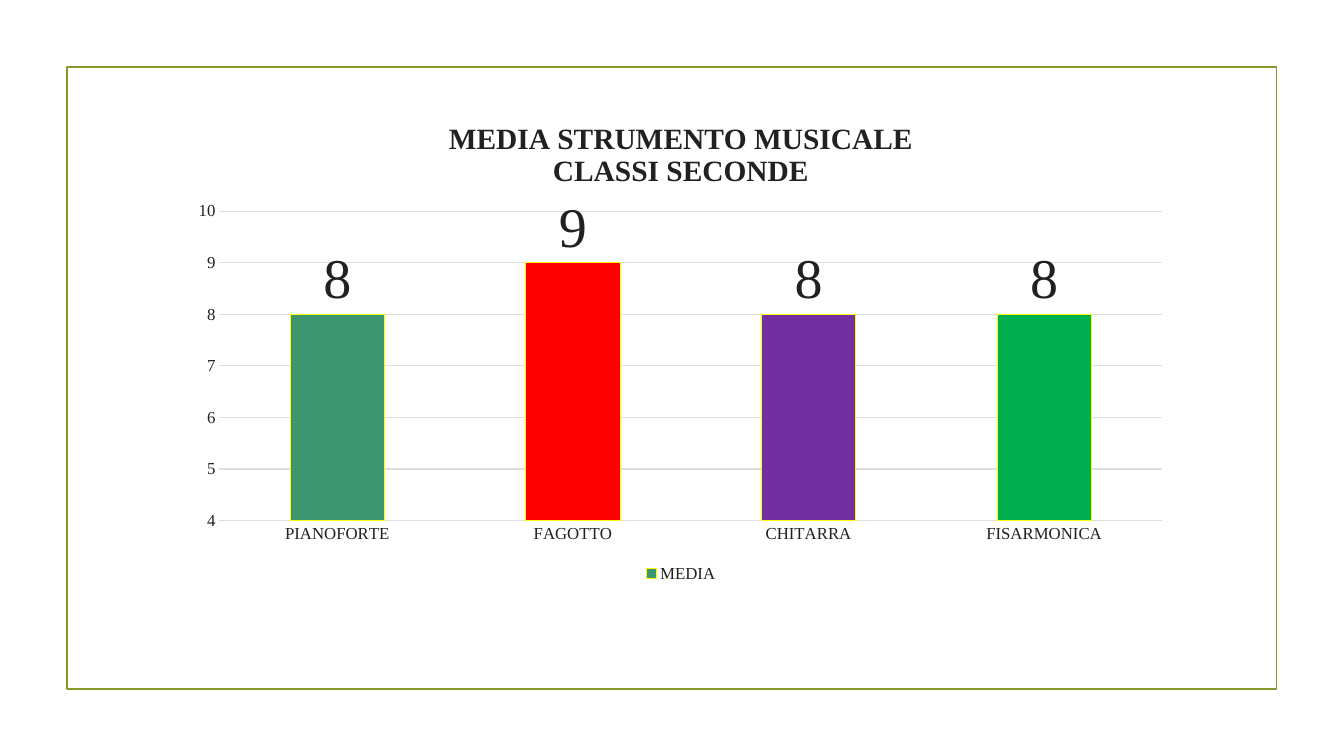
import enum
import lxml.etree
import pptx
import pptx.chart.data
import pptx.dml.color
import pptx.enum.chart
import pptx.enum.shapes
import pptx.oxml
import pptx.oxml.ns
import pptx.util
from pptx.util import Cm, Pt


class Theme(enum.Enum):
    FONT = "Times New Roman"
    FRAME = "83992A"
    TEXT = "212121"
    GRID = "DEDEDE"
    OUTLINE = "FFFF00"
    BARS = ("3C9770", "FF0000", "7030A0", "00B050")
    AXIS_SIZE = 12
    TITLE_SIZE = 21
    LABEL_SIZE = 40


def style_font(font, size, bold=False):
    font.name = Theme.FONT.value
    font.size = Pt(size.value)
    font.bold = bold
    font.color.rgb = pptx.dml.color.RGBColor.from_string(Theme.TEXT.value)


def style_line(line, color, width=0.75):
    line.color.rgb = pptx.dml.color.RGBColor.from_string(color.value)
    line.width = Pt(width)


deck = pptx.Presentation()
deck.slide_width = Cm(33.87)
deck.slide_height = Cm(19.05)
page = deck.slides.add_slide(deck.slide_layouts[6])

frame = page.shapes.add_shape(
    pptx.enum.shapes.MSO_SHAPE.RECTANGLE, Cm(1.69), Cm(1.69), Cm(30.48), Cm(15.67)
)
frame.shadow.inherit = False
frame.fill.background()
style_line(frame.line, Theme.FRAME, 1.25)

grades = pptx.chart.data.CategoryChartData(number_format="0")
grades.categories = ["PIANOFORTE", "FAGOTTO", "CHITARRA", "FISARMONICA"]
grades.add_series("MEDIA", [8, 9, 8, 8])
chart = page.shapes.add_chart(
    pptx.enum.chart.XL_CHART_TYPE.COLUMN_CLUSTERED,
    Cm(4.52), Cm(2.59), Cm(25.27), Cm(12.19), grades,
).chart
style_font(chart.font, Theme.AXIS_SIZE)

chart.has_title = True
title = chart.chart_title
title.include_in_layout = False
title.text_frame.text = "MEDIA STRUMENTO MUSICALE\nCLASSI SECONDE"
for para in title.text_frame.paragraphs:
    style_font(para.font, Theme.TITLE_SIZE, bold=True)

chart.has_legend = True
chart.legend.position = pptx.enum.chart.XL_LEGEND_POSITION.BOTTOM
chart.legend.include_in_layout = False
style_font(chart.legend.font, Theme.AXIS_SIZE)

for axis in (chart.category_axis, chart.value_axis):
    axis.major_tick_mark = pptx.enum.chart.XL_TICK_MARK.NONE
    axis.minor_tick_mark = pptx.enum.chart.XL_TICK_MARK.NONE
    style_font(axis.tick_labels.font, Theme.AXIS_SIZE)
style_line(chart.category_axis.format.line, Theme.GRID)

value_axis = chart.value_axis
value_axis.minimum_scale = 4
value_axis.maximum_scale = 10
value_axis.major_unit = 1
value_axis.format.line.fill.background()
style_line(value_axis.major_gridlines.format.line, Theme.GRID)

plot = chart.plots[0]
plot.gap_width = 150
plot.vary_by_categories = False
series = plot.series[0]
series.invert_if_negative = False
bars = [series] + [series.points[index] for index in range(1, 4)]
for bar, color in zip(bars, Theme.BARS.value):
    bar.format.fill.solid()
    bar.format.fill.fore_color.rgb = pptx.dml.color.RGBColor.from_string(color)
    style_line(bar.format.line, Theme.OUTLINE)

labels = series.data_labels
labels.show_value = True
labels.position = pptx.enum.chart.XL_LABEL_POSITION.OUTSIDE_END
style_font(labels.font, Theme.LABEL_SIZE)

plot_area = plot._element.getparent()
for old_layout in plot_area.findall(pptx.oxml.ns.qn("c:layout")):
    plot_area.remove(old_layout)
layout = pptx.oxml.parse_xml(
    f'<c:layout {pptx.oxml.ns.nsdecls("c")}><c:manualLayout/></c:layout>'
)
settings = {
    "layoutTarget": "inner", "xMode": "edge", "yMode": "edge",
    "x": 0.04, "y": 0.224, "w": 0.94, "h": 0.64,
}
for name, value in settings.items():
    lxml.etree.SubElement(layout[0], pptx.oxml.ns.qn(f"c:{name}")).set("val", str(value))
plot_area.insert(0, layout)

deck.save("out.pptx")
